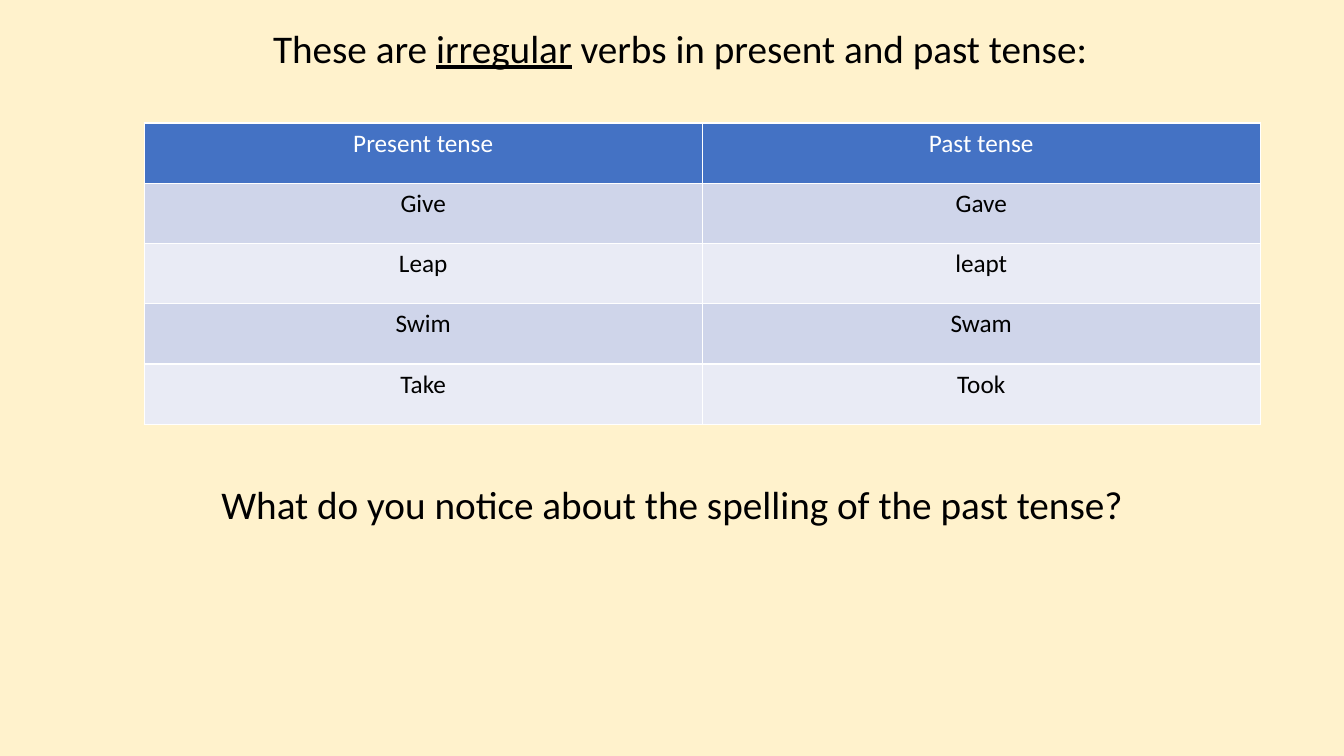
from pptx import Presentation
from pptx.dml.color import RGBColor
from pptx.enum.text import MSO_AUTO_SIZE, PP_ALIGN
from pptx.util import Inches, Pt
from lxml import etree

CENTER = PP_ALIGN.CENTER
NO_AUTOFIT = MSO_AUTO_SIZE.NONE
GROW = MSO_AUTO_SIZE.SHAPE_TO_FIT_TEXT

CREAM = RGBColor(0xFF, 0xF2, 0xCC)
BLACK = RGBColor(0x00, 0x00, 0x00)
WHITE = RGBColor(0xFF, 0xFF, 0xFF)
HEADER_BLUE = RGBColor(0x44, 0x72, 0xC4)
BAND_DARK = RGBColor(0xCF, 0xD5, 0xEA)
BAND_LIGHT = RGBColor(0xE9, 0xEB, 0xF5)

DRAWING_NS = "http://schemas.openxmlformats.org/drawingml/2006/main"

VERBS = [
    ("Present tense", "Past tense"),
    ("Give", "Gave"),
    ("Leap", "leapt"),
    ("Swim", "Swam"),
    ("Take", "Took"),
]


def format_paragraph(paragraph, size, color):
    paragraph.alignment = CENTER
    paragraph.font.name = "Calibri"
    paragraph.font.size = Pt(size)
    paragraph.font.color.rgb = color


def add_heading(slide, left, top, width, height):
    """Fill the body placeholder with the introductory sentence."""
    body = slide.placeholders[1]
    body.left, body.top, body.width, body.height = left, top, width, height
    body.text_frame.auto_size = NO_AUTOFIT
    sentence = body.text_frame.paragraphs[0]
    for words, underlined in [
        ("These are ", False),
        ("irregular", True),
        (" verbs in present and past tense:", False),
    ]:
        run = sentence.add_run()
        run.text = words
        if underlined:
            run.font.underline = True
    sentence.line_spacing = 0.9
    sentence.space_before = Pt(10)
    format_paragraph(sentence, 28, BLACK)

    # No bullet and no hanging indent
    properties = sentence._p.get_or_add_pPr()
    properties.set("marL", "0")
    properties.set("indent", "0")
    no_bullet = etree.Element(f"{{{DRAWING_NS}}}buNone")
    properties.find(f"{{{DRAWING_NS}}}spcBef").addnext(no_bullet)


def add_verb_table(slide, left, top, width, height):
    """Add the verb pairs under a header row; the table style draws the borders."""
    table = slide.shapes.add_table(
        len(VERBS), len(VERBS[0]), left, top, width, height
    ).table
    for row, pair in enumerate(VERBS):
        if row == 0:
            fill, color = HEADER_BLUE, WHITE
        else:
            fill, color = (BAND_DARK if row % 2 else BAND_LIGHT), BLACK
        for column, verb in enumerate(pair):
            cell = table.cell(row, column)
            cell.fill.solid()
            cell.fill.fore_color.rgb = fill
            cell.text = verb
            paragraph = cell.text_frame.paragraphs[0]
            format_paragraph(paragraph, 18, color)
            # The header style is bold unless the run says otherwise
            paragraph.runs[0].font.bold = False


def add_question(slide, left, top, width, height):
    """Add the question below the table."""
    frame = slide.shapes.add_textbox(left, top, width, height).text_frame
    frame.word_wrap = True
    frame.auto_size = GROW
    question = frame.paragraphs[0]
    question.text = "What do you notice about the spelling of the past tense?"
    format_paragraph(question, 28, BLACK)


def build_verb_slide(presentation):
    slide = presentation.slides.add_slide(presentation.slide_layouts[1])
    slide.background.fill.solid()
    slide.background.fill.fore_color.rgb = CREAM

    # The heading sits in the body, so the title placeholder is not needed
    title = slide.shapes.title._element
    title.getparent().remove(title)

    add_heading(slide, Inches(0.23), Inches(0.24), Inches(13.03), Inches(7.14))
    add_verb_table(slide, Inches(1.43), Inches(1.22), Inches(11.07), Inches(2.99))
    add_question(slide, Inches(0.3), Inches(4.72), Inches(12.73), Inches(0.57))


def main():
    presentation = Presentation()
    presentation.slide_width = Inches(13.33)
    presentation.slide_height = Inches(7.5)
    build_verb_slide(presentation)
    presentation.save("out.pptx")


if __name__ == "__main__":
    main()
